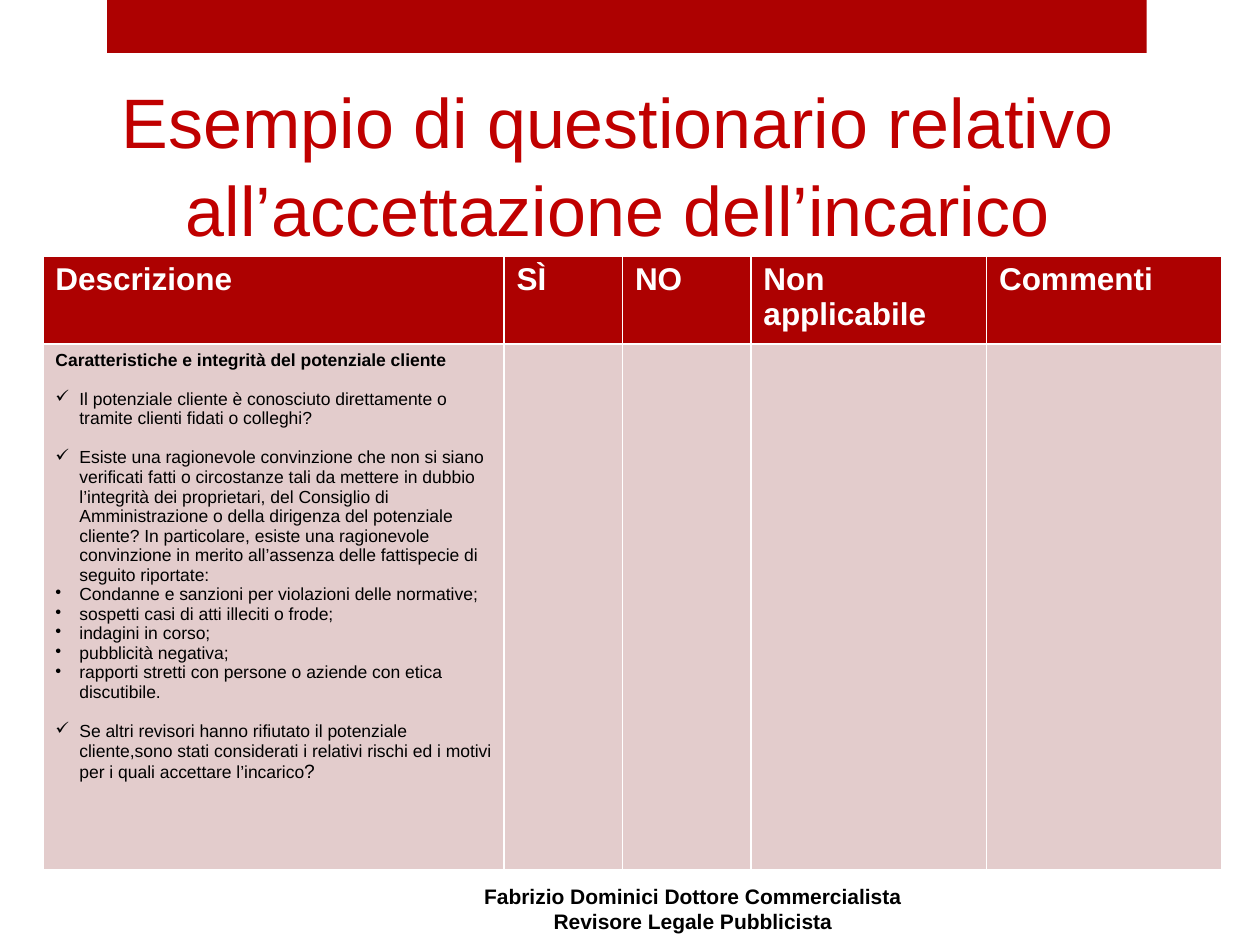
"""Build the slide with the client acceptance questionnaire."""
from lxml import etree
from pptx import Presentation
from pptx.dml.color import RGBColor
from pptx.enum.shapes import MSO_SHAPE
from pptx.enum.text import MSO_ANCHOR, PP_ALIGN
from pptx.oxml.ns import qn
from pptx.util import Inches, Pt

RECTANGLE = MSO_SHAPE.RECTANGLE
CENTER = PP_ALIGN.CENTER
BOTTOM, MIDDLE = MSO_ANCHOR.BOTTOM, MSO_ANCHOR.MIDDLE

FONT = "Arial"
RED, TITLE_RED, PINK = "AD0101", "C00000", "E3CCCC"
WHITE, BLACK = "FFFFFF", "000000"
CHECK, DOT = "✓", "•"
HANGING = 0.19
GAP = 11.2

TITLE = "Esempio di questionario relativo all’accettazione dell’incarico"
AUTHOR = ["Fabrizio Dominici Dottore Commercialista", "Revisore Legale Pubblicista"]
COLUMNS = [("Descrizione", 3.66), ("SÌ", 0.94), ("NO", 1.02),
           ("Non applicabile", 1.87), ("Commenti", 1.87)]
ROW_HEIGHTS = [0.7, 4.17]
QUESTIONS = [
    (None, [("Caratteristiche e integrità del potenziale cliente", 10)]),
    (CHECK, [("Il potenziale cliente è conosciuto direttamente o tramite "
              "clienti fidati o colleghi?", 10)]),
    (CHECK, [("Esiste una ragionevole convinzione che non si siano verificati fatti o "
              "circostanze tali da mettere in dubbio l’integrità dei proprietari, del "
              "Consiglio di Amministrazione o della dirigenza del potenziale cliente? "
              "In particolare, esiste una ragionevole convinzione in merito "
              "all’assenza delle fattispecie di seguito riportate:", 10)]),
    (DOT, [("Condanne e sanzioni per violazioni delle normative;", 10)]),
    (DOT, [("sospetti casi di atti illeciti o frode;", 10)]),
    (DOT, [("indagini in corso;", 10)]),
    (DOT, [("pubblicità negativa;", 10)]),
    (DOT, [("rapporti stretti con persone o aziende con etica discutibile.", 10)]),
    (CHECK, [("Se altri revisori hanno rifiutato il potenziale cliente,sono stati "
              "considerati i relativi rischi ed i motivi per i quali accettare "
              "l’incarico", 10), ("?", 11)]),
]


def color(value):
    return RGBColor.from_string(value)


def add_run(paragraph, text, size, text_color, bold=False):
    run = paragraph.add_run()
    run.text = text
    run.font.name = FONT
    run.font.size = Pt(size)
    run.font.bold = bold
    run.font.color.rgb = color(text_color)


def next_paragraph(frame, index):
    return frame.add_paragraph() if index else frame.paragraphs[0]


def add_text(slide, box, lines, size, text_color, anchor, bold=False, spacing=1.0):
    frame = slide.shapes.add_textbox(*map(Inches, box)).text_frame
    frame.word_wrap = True
    frame.vertical_anchor = anchor
    frame.margin_bottom = frame.margin_top = Inches(0.03)
    for index, line in enumerate(lines):
        paragraph = next_paragraph(frame, index)
        paragraph.alignment = CENTER
        paragraph.line_spacing = spacing
        add_run(paragraph, line, size, text_color, bold)


def add_bullet(paragraph, mark):
    properties = paragraph._p.get_or_add_pPr()
    properties.set("marL", str(Inches(HANGING)))
    properties.set("indent", str(-Inches(HANGING)))
    etree.SubElement(properties, qn("a:buChar")).set("char", mark)


def style_cell(cell, fill):
    cell.fill.solid()
    cell.fill.fore_color.rgb = color(fill)
    properties = cell._tc.get_or_add_tcPr()
    for index, side in enumerate(("lnL", "lnR", "lnT", "lnB")):
        line = etree.Element(qn(f"a:{side}"), w=str(Pt(1)))
        solid = etree.SubElement(line, qn("a:solidFill"))
        etree.SubElement(solid, qn("a:srgbClr"), val=WHITE)
        properties.insert(index, line)


def add_questionnaire(slide):
    width = sum(column_width for _, column_width in COLUMNS)
    table = slide.shapes.add_table(
        len(ROW_HEIGHTS), len(COLUMNS), Inches(0.34), Inches(2.03),
        Inches(width), Inches(sum(ROW_HEIGHTS))).table
    for row, height in zip(table.rows, ROW_HEIGHTS):
        row.height = Inches(height)
    for index, (heading, column_width) in enumerate(COLUMNS):
        table.columns[index].width = Inches(column_width)
        header = table.cell(0, index)
        style_cell(header, RED)
        style_cell(table.cell(1, index), PINK)
        add_run(header.text_frame.paragraphs[0], heading, 18, WHITE, True)

    frame = table.cell(1, 0).text_frame
    for index, (mark, runs) in enumerate(QUESTIONS):
        paragraph = next_paragraph(frame, index)
        if mark == CHECK:
            paragraph.space_before = Pt(GAP)
        if mark:
            add_bullet(paragraph, mark)
        for text, size in runs:
            add_run(paragraph, text, size, BLACK, mark is None)


def main():
    presentation = Presentation()
    presentation.slide_width, presentation.slide_height = Inches(10), Inches(7.5)
    slide = presentation.slides.add_slide(presentation.slide_layouts[6])

    band = slide.shapes.add_shape(RECTANGLE, *map(Inches, (0.85, 0, 8.25, 0.42)))
    band.shadow.inherit = False
    band.fill.solid()
    band.fill.fore_color.rgb = color(RED)
    band.line.fill.background()

    add_text(slide, (0.51, 0.2, 8.78, 1.82), [TITLE], 40, TITLE_RED, BOTTOM, spacing=1.05)
    add_questionnaire(slide)
    add_text(slide, (3.68, 7.01, 3.64, 0.4), AUTHOR, 12, BLACK, MIDDLE, bold=True)
    presentation.save("out.pptx")


if __name__ == "__main__":
    main()
